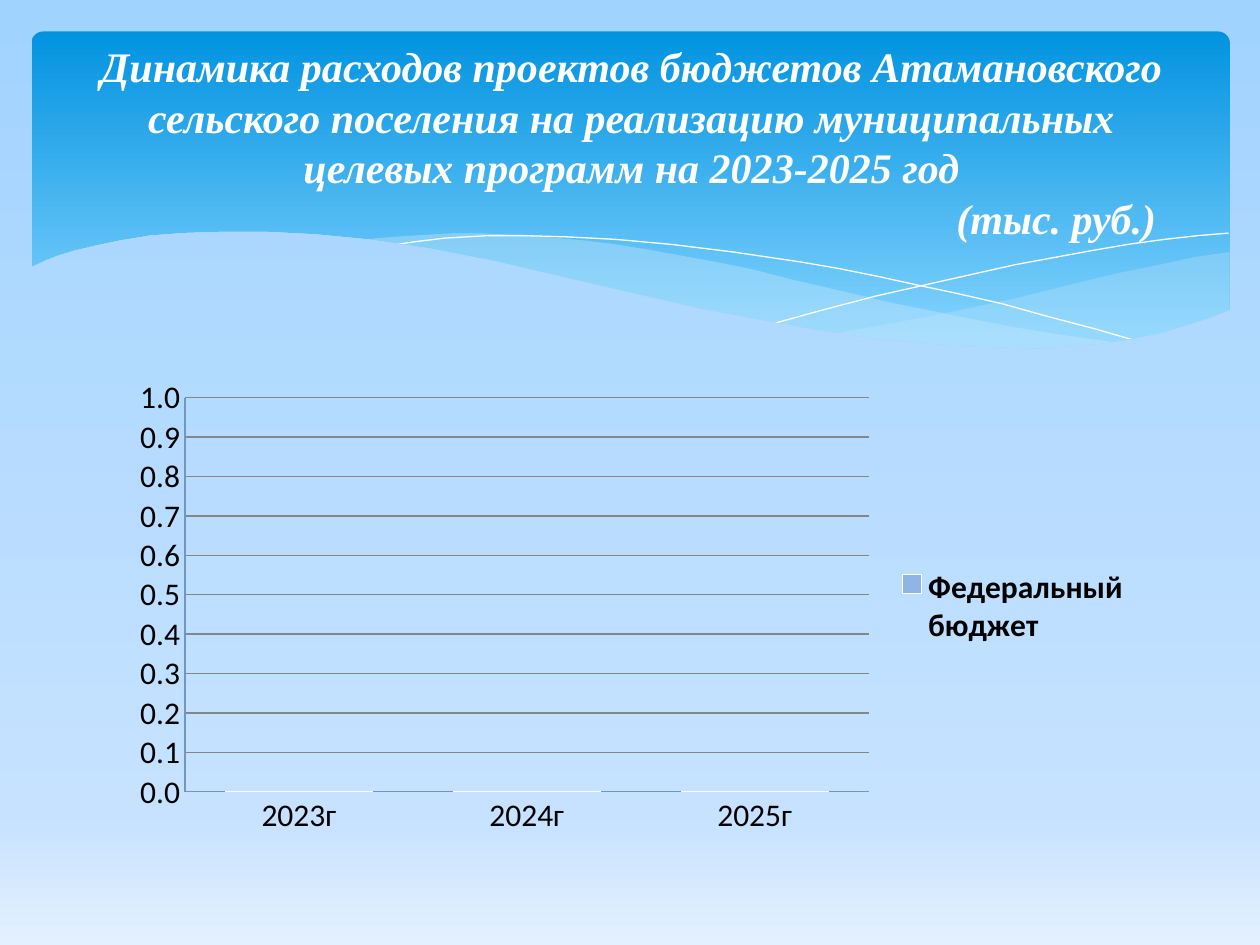
from dataclasses import dataclass
from lxml.etree import Element, SubElement
from pptx import Presentation
from pptx.chart.data import CategoryChartData
from pptx.dml.color import RGBColor
from pptx.enum.chart import XL_CHART_TYPE, XL_LEGEND_POSITION, XL_TICK_MARK
from pptx.enum.shapes import MSO_SHAPE
from pptx.enum.text import MSO_ANCHOR, MSO_AUTO_SIZE, PP_ALIGN
from pptx.oxml.ns import qn
from pptx.util import Pt

PX = 9144  # 100 px to the inch


@dataclass(frozen=True)
class Theme:
    sky: tuple = ((0, "A1D3FF"), (86, "C6E2FF"), (100, "E3F0FF"))
    banner: tuple = ((0, "0293E0"), (90, "83D3FE"))
    wave: str = "C6E7FC"
    white: str = "FFFFFF"
    ink: str = "000000"
    grid: str = "868686"
    axis: str = "6F97BF"
    bars: tuple = ("FFFF99", "00B0F0", "8FB5E5")
    head_font: str = "Times New Roman"
    body_font: str = "Calibri"
    head_size: int = 24
    body_size: int = 18


THEME = Theme()

RIGHT_WAVE = [
    (976, 200), (948, 204), (921, 210), (891, 216), (861, 223), (805, 237),
    (753, 248), (706, 257), (661, 265), (691, 269), (719, 272), (745, 275),
    (769, 277), (803, 278), (835, 277), (863, 275), (889, 272), (913, 267),
    (935, 262), (949, 257), (963, 252), (976, 247)]
LONG_WAVE = [
    (893, 273), (866, 269), (837, 265), (807, 260), (775, 254), (741, 247),
    (706, 240), (668, 231), (629, 222), (598, 214), (569, 208), (541, 203),
    (514, 198), (489, 194), (465, 191), (442, 189), (420, 187), (399, 186),
    (380, 185), (361, 185), (328, 187), (299, 189), (286, 191), (323, 196),
    (362, 203), (404, 211), (449, 222), (491, 232), (530, 240), (566, 248),
    (601, 255), (634, 261), (665, 266), (695, 270), (722, 274), (748, 276),
    (773, 277), (807, 278), (838, 278), (867, 276), (884, 274)]
FALLING = [
    (309, 195), (328, 192), (353, 189), (387, 187), (416, 187), (450, 188),
    (489, 190), (533, 194), (582, 200), (636, 208), (665, 213), (695, 219),
    (727, 226), (760, 233), (795, 241), (831, 251), (869, 261), (907, 272)]
RISING = [
    (613, 257), (653, 246), (695, 235), (748, 223), (806, 210), (866, 199),
    (895, 194), (924, 190), (951, 187), (975, 185)]
SKY_EDGE = [
    (977, 246), (959, 253), (940, 259), (920, 265), (899, 269), (875, 273),
    (850, 275), (823, 277), (793, 276), (761, 275), (726, 272), (688, 268),
    (648, 262), (603, 254), (555, 245), (503, 233), (447, 220), (391, 207),
    (340, 197), (292, 190), (250, 186), (211, 184), (177, 184), (146, 185),
    (119, 187), (95, 191), (76, 195), (59, 199), (46, 203), (36, 207),
    (23, 213), (23, 329), (977, 329)]


def rgb(code):
    return RGBColor.from_string(code)


def blend(props, stops):
    """Swap the solid fill in props for a gradient from top to bottom."""
    grad = Element(qn("a:gradFill"), rotWithShape="1")
    marks = SubElement(grad, qn("a:gsLst"))
    for spot, code in stops:
        mark = SubElement(marks, qn("a:gs"), pos=str(spot * 1000))
        SubElement(mark, qn("a:srgbClr"), val=code)
    SubElement(grad, qn("a:lin"), ang="5400000", scaled="0")
    solid = props.find(qn("a:solidFill"))
    props.replace(solid, grad)


def add_banner(slide):
    box = slide.shapes.add_shape(
        MSO_SHAPE.ROUNDED_RECTANGLE, 25 * PX, 25 * PX, 951 * PX, 270 * PX)
    box.adjustments[0] = 0.034
    box.shadow.inherit = False
    box.line.fill.background()
    box.fill.solid()
    blend(box._element.spPr, THEME.banner)


def add_free(slide, points, closed=True):
    pen = slide.shapes.build_freeform(*points[0], scale=PX)
    pen.add_line_segments(points[1:], close=closed)
    free = pen.convert_to_shape()
    free.shadow.inherit = False
    return free


def add_wave(slide, points, alpha):
    wave = add_free(slide, points)
    wave.line.fill.background()
    wave.fill.solid()
    wave.fill.fore_color.rgb = rgb(THEME.wave)
    color = wave._element.spPr.find(qn("a:solidFill"))[0]
    SubElement(color, qn("a:alpha"), val=str(alpha * 1000))


def add_curve(slide, points):
    curve = add_free(slide, points, closed=False)
    curve.fill.background()
    curve.line.color.rgb = rgb(THEME.white)
    curve.line.width = Pt(0)


def add_sky(slide):
    """Cover the foot of the banner with the slide background."""
    sky = add_free(slide, SKY_EDGE)
    sky.line.fill.background()
    node = sky._element
    node.set("useBgFill", "1")
    node.remove(node.find(qn("p:style")))


def set_font(font, size, name, color, bold=False, italic=False):
    font.size, font.name = Pt(size), name
    font.bold, font.italic = bold, italic
    font.color.rgb = rgb(color)


def set_title(slide, text, unit):
    title = slide.shapes.title
    title.left, title.top = 51 * PX, 36 * PX
    title.width, title.height = 900 * PX, 153 * PX
    frame = title.text_frame
    frame.text = f"{text}\n{unit}"
    frame.auto_size = MSO_AUTO_SIZE.NONE
    frame.vertical_anchor = MSO_ANCHOR.MIDDLE
    for para in frame.paragraphs:
        para.alignment = PP_ALIGN.CENTER
        set_font(para.font, THEME.head_size, THEME.head_font, THEME.white,
                 True, True)
    last = frame.paragraphs[-1]
    last.alignment = PP_ALIGN.LEFT
    last._p.get_or_add_pPr().set("marL", str(698 * PX))
    slide.shapes._spTree.append(title._element)


def make_layout(x, y, w, h, inner=False):
    layout = Element(qn("c:layout"))
    manual = SubElement(layout, qn("c:manualLayout"))
    pairs = [("xMode", "edge"), ("yMode", "edge"),
             ("x", x), ("y", y), ("w", w), ("h", h)]
    if inner:
        pairs.insert(0, ("layoutTarget", "inner"))
    for tag, val in pairs:
        SubElement(manual, qn(f"c:{tag}"), val=str(val))
    return layout


def drop_layout(node):
    for old in node.findall(qn("c:layout")):
        node.remove(old)


def set_legend(chart, hidden):
    chart.has_legend = True
    legend = chart.legend
    legend.position = XL_LEGEND_POSITION.RIGHT
    legend.include_in_layout = False
    set_font(legend.font, THEME.body_size, THEME.body_font, THEME.ink, True)
    node = legend._element
    drop_layout(node)
    spot = node.find(qn("c:legendPos"))
    spot.addnext(make_layout(0.76, 0.41, 0.23, 0.18))
    for idx in reversed(hidden):
        entry = Element(qn("c:legendEntry"))
        SubElement(entry, qn("c:idx"), val=str(idx))
        SubElement(entry, qn("c:delete"), val="1")
        spot.addnext(entry)


def add_budget(slide):
    data = CategoryChartData(number_format="#,##0.0")
    data.categories = ["2023г", "2024г", "2025г"]
    for name in ("Series 1", "Series 2", "Федеральный бюджет"):
        data.add_series(name, (0, 0, 0))
    chart = slide.shapes.add_chart(
        XL_CHART_TYPE.COLUMN_STACKED, 95 * PX, 293 * PX, 810 * PX, 377 * PX,
        data).chart
    chart.has_title = False
    set_font(chart.font, THEME.body_size, THEME.body_font, THEME.ink)
    plot = chart.plots[0]
    plot.gap_width, plot.overlap = 55, 100
    plot.vary_by_categories = False
    for series, color in zip(plot.series, THEME.bars):
        series.format.fill.solid()
        series.format.fill.fore_color.rgb = rgb(color)
        series.format.line.color.rgb = rgb(THEME.white)
    scale = chart.value_axis
    for axis in (chart.category_axis, scale):
        axis.major_tick_mark = XL_TICK_MARK.NONE
        axis.format.line.color.rgb = rgb(THEME.axis)
    scale.minimum_scale, scale.maximum_scale, scale.major_unit = 0, 1, 0.1
    scale.tick_labels.number_format = "#,##0.0"
    scale.tick_labels.number_format_is_linked = False
    scale.major_gridlines.format.line.color.rgb = rgb(THEME.grid)
    area = chart._chartSpace.find(".//" + qn("c:plotArea"))
    drop_layout(area)
    area.insert(0, make_layout(0.064, 0.06, 0.67, 0.83, inner=True))
    set_legend(chart, [0, 1])


def main():
    deck = Presentation()
    deck.slide_width, deck.slide_height = 1000 * PX, 750 * PX
    slide = deck.slides.add_slide(deck.slide_layouts[5])
    slide.background.fill.solid()
    blend(slide._element.find(".//" + qn("p:bgPr")), THEME.sky)
    add_banner(slide)
    add_wave(slide, RIGHT_WAVE, 29)
    add_wave(slide, LONG_WAVE, 40)
    add_curve(slide, FALLING)
    add_curve(slide, RISING)
    add_sky(slide)
    add_budget(slide)
    set_title(slide, "Динамика расходов проектов бюджетов Атамановского "
              "сельского поселения на реализацию муниципальных целевых "
              "программ на 2023-2025 год", "(тыс. руб.)")
    deck.save("out.pptx")


if __name__ == "__main__":
    main()
